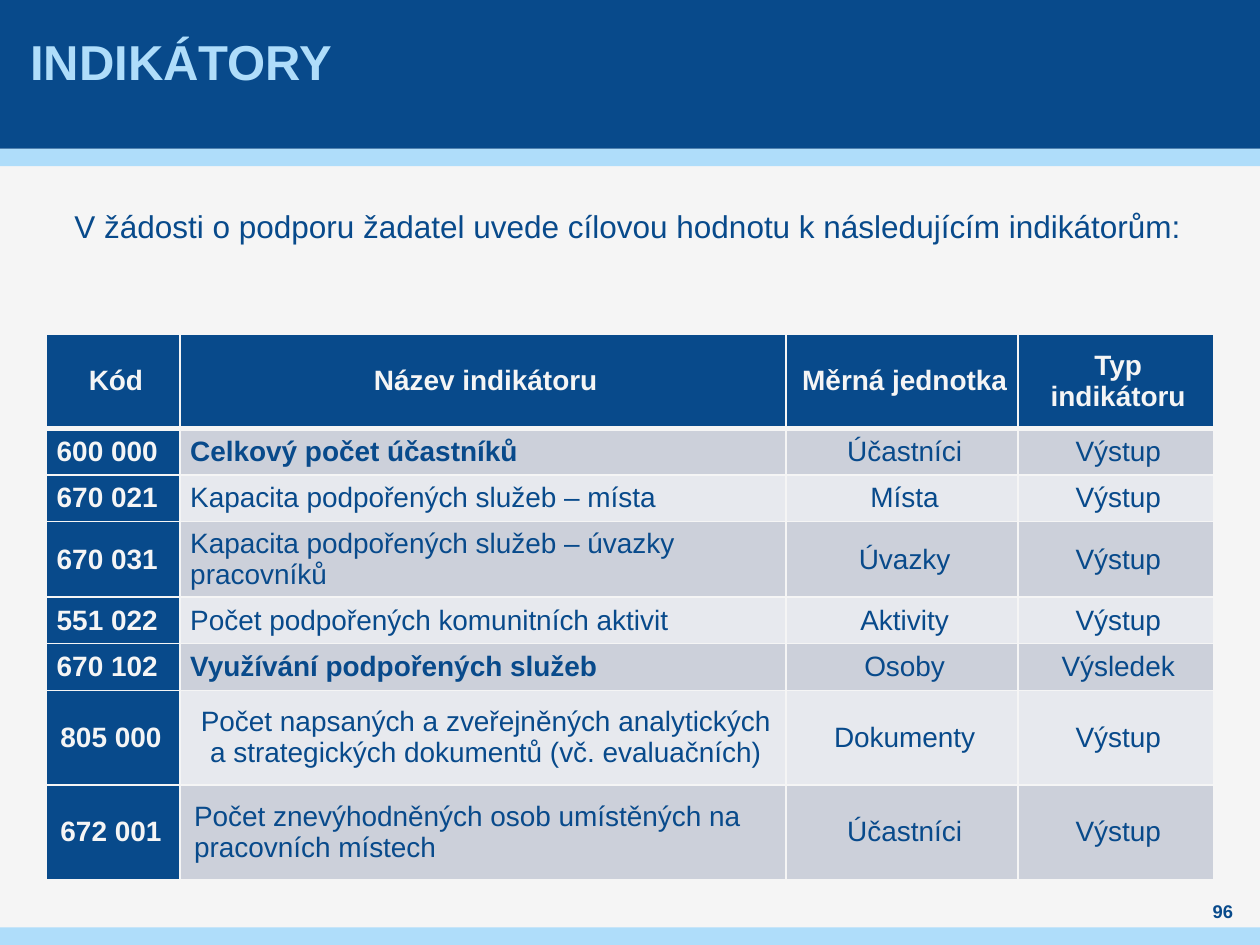
from lxml.etree import SubElement
from pptx import Presentation
from pptx.dml.color import RGBColor
from pptx.enum.shapes import MSO_SHAPE as Shape
from pptx.enum.text import MSO_ANCHOR as Anchor, MSO_AUTO_SIZE as AutoSize, PP_ALIGN as Align
from pptx.oxml.ns import qn
from pptx.util import Inches, Pt

NAVY, SKY, PAPER = "084A8B", "AFDDFA", "F5F5F5"
DARK_BAND, LIGHT_BAND = "CCD0DA", "E7E9EE"

HEADINGS = ["Kód", "Název indikátoru", "Měrná jednotka", "Typ indikátoru"]
INDICATORS = [
    ["600 000", "Celkový počet účastníků", "Účastníci", "Výstup"],
    ["670 021", "Kapacita podpořených služeb – místa", "Místa", "Výstup"],
    ["670 031", "Kapacita podpořených služeb – úvazky pracovníků", "Úvazky", "Výstup"],
    ["551 022", "Počet podpořených komunitních aktivit", "Aktivity", "Výstup"],
    ["670 102", "Využívání podpořených služeb", "Osoby", "Výsledek"],
    ["805 000", "Počet napsaných a zveřejněných analytických a strategických dokumentů (vč. evaluačních)",
     "Dokumenty", "Výstup"],
    ["672 001", "Počet znevýhodněných osob umístěných na pracovních místech", "Účastníci", "Výstup"],
]
KEY_CODES = {"600 000", "670 102"}
CENTERED_CODES = {"805 000"}
WIDE_INSET_CODES = {"805 000", "672 001"}
COLUMN_WIDTHS = [1.06, 4.81, 1.84, 1.55]
ROW_HEIGHTS = [0.75, 0.37, 0.37, 0.6, 0.37, 0.37, 0.75, 0.75]


def color(value):
    return RGBColor.from_string(value)


def apply(target, values):
    for name, value in values.items():
        setattr(target, name, value)


class SlideBuilder:
    font_name = "Arial"

    def __init__(self, presentation):
        self.slide = presentation.slides.add_slide(presentation.slide_layouts[1])
        fill = self.slide.background.fill
        fill.solid()
        fill.fore_color.rgb = color(PAPER)

    def place(self, shape, left, top, width, height):
        apply(shape, {"left": Inches(left), "top": Inches(top),
                      "width": Inches(width), "height": Inches(height)})

    def add_text(self, frame, text, size, text_color, bold=False, **layout):
        paragraph = frame.paragraphs[0]
        apply(paragraph, layout)
        run = paragraph.add_run()
        run.text = text
        apply(run.font, {"name": self.font_name, "size": Pt(size), "bold": bold})
        run.font.color.rgb = color(text_color)
        return paragraph

    def format_frame(self, frame, inset, anchor):
        apply(frame, {"word_wrap": True, "auto_size": AutoSize.NONE, "vertical_anchor": anchor,
                      "margin_left": Inches(inset), "margin_right": Inches(inset),
                      "margin_top": 0, "margin_bottom": 0})

    def band(self, top, height, fill_color):
        shape = self.slide.shapes.add_shape(
            Shape.RECTANGLE, 0, Inches(top), Inches(10), Inches(height))
        shape.shadow.inherit = False
        shape.fill.solid()
        shape.fill.fore_color.rgb = color(fill_color)
        shape.line.fill.background()
        self.slide.shapes.element.insert(2, shape.element)

    def title(self, text, *box):
        shape = self.slide.shapes.title
        self.place(shape, *box)
        self.format_frame(shape.text_frame, 0.04, Anchor.MIDDLE)
        self.add_text(shape.text_frame, text, 28, SKY, True, alignment=Align.LEFT)

    def body(self, text, *box):
        shape = self.slide.placeholders[1]
        self.place(shape, *box)
        self.format_frame(shape.text_frame, 0, Anchor.TOP)
        paragraph = self.add_text(shape.text_frame, text, 18, NAVY, alignment=Align.JUSTIFY,
                                  line_spacing=1.07, space_before=Pt(6), space_after=Pt(8))
        properties = paragraph._p.get_or_add_pPr()
        properties.set("marL", "0")
        properties.set("indent", "0")
        SubElement(properties, qn("a:buNone"))

    def page_number(self, text, *box):
        shape = self.slide.shapes.add_textbox(*map(Inches, box))
        self.format_frame(shape.text_frame, 0, Anchor.MIDDLE)
        self.add_text(shape.text_frame, text, 10.5, NAVY, True, alignment=Align.CENTER)

    def border(self, cell, side, width):
        line = SubElement(cell._tc.get_or_add_tcPr(), qn(f"a:ln{side}"), w=str(Pt(width)))
        SubElement(SubElement(line, qn("a:solidFill")), qn("a:srgbClr"), val=PAPER)

    def cell(self, cell, text, fill_color, text_color, bold, alignment, inset, top, bottom):
        apply(cell, {"vertical_anchor": Anchor.MIDDLE,
                     "margin_left": Inches(inset), "margin_right": Inches(inset),
                     "margin_top": 0, "margin_bottom": 0})
        for side, width in {"L": 1, "R": 1, "T": top, "B": bottom}.items():
            self.border(cell, side, width)
        cell.fill.solid()
        cell.fill.fore_color.rgb = color(fill_color)
        paragraph = self.add_text(cell.text_frame, text, 16, text_color, bold, alignment=alignment,
                                  space_before=Pt(3), space_after=Pt(3))
        paragraph._p.get_or_add_pPr().set("marL", str(Inches(0.04)))

    def table(self, left, top):
        rows = [HEADINGS] + INDICATORS
        table = self.slide.shapes.add_table(
            len(rows), len(HEADINGS), Inches(left), Inches(top),
            Inches(sum(COLUMN_WIDTHS)), Inches(sum(ROW_HEIGHTS))).table
        for column, width in zip(table.columns, COLUMN_WIDTHS):
            column.width = Inches(width)
        for row, height in zip(table.rows, ROW_HEIGHTS):
            row.height = Inches(height)
        for row_index, row in enumerate(rows):
            code = row[0]
            heading = row_index == 0
            band_color = DARK_BAND if row_index % 2 else LIGHT_BAND
            for column_index, text in enumerate(row):
                navy = heading or column_index == 0
                name = column_index == 1
                centered = heading or column_index > 1 or (name and code in CENTERED_CODES)
                self.cell(
                    table.cell(row_index, column_index), text,
                    fill_color=NAVY if navy else band_color,
                    text_color=PAPER if navy else NAVY,
                    bold=navy or (name and code in KEY_CODES),
                    alignment=Align.CENTER if centered else Align.LEFT,
                    inset=0.07 if code in WIDE_INSET_CODES else 0.04,
                    top=3 if row_index == 1 else 1,
                    bottom=3 if heading else 1)


def main():
    presentation = Presentation()
    apply(presentation, {"slide_width": Inches(10), "slide_height": Inches(7.5)})
    builder = SlideBuilder(presentation)
    builder.band(7.36, 0.14, SKY)
    builder.band(0, 1.18, NAVY)
    builder.band(1.18, 0.14, SKY)
    builder.title("INDIKÁTORY", 0.2, -0.11, 9.21, 1.18)
    builder.body("V žádosti o podporu žadatel uvede cílovou hodnotu k následujícím indikátorům:",
                 0.59, 1.62, 8.82, 5.04)
    builder.page_number("96", 9.45, 7.13, 0.51, 0.2)
    builder.table(0.37, 2.65)
    presentation.save("out.pptx")


if __name__ == "__main__":
    main()
